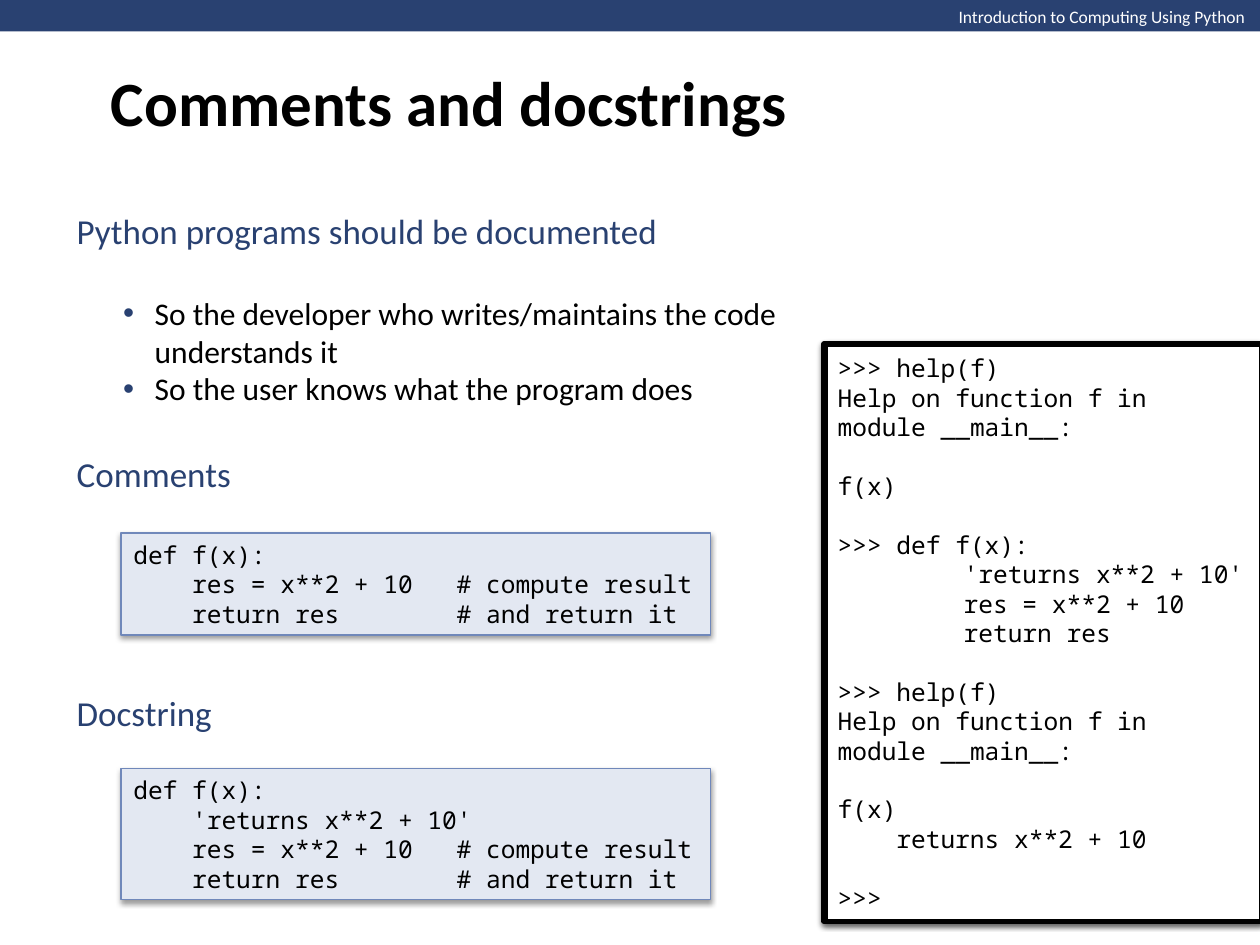
from dataclasses import dataclass

from lxml.etree import SubElement
from pptx import Presentation
from pptx.dml.color import RGBColor
from pptx.enum.shapes import MSO_SHAPE
from pptx.enum.text import MSO_ANCHOR, PP_ALIGN
from pptx.oxml.ns import qn
from pptx.util import Pt


@dataclass(frozen=True)
class Theme:
    navy: str = "294171"
    black: str = "000000"
    white: str = "FFFFFF"
    code_fill: str = "E3E8F2"
    code_line: str = "7088BA"
    sans: str = "Calibri"
    mono: str = "Noto Sans Mono"
    small: float = 10
    code: float = 14
    bullet: float = 18
    heading: float = 20
    title: float = 36


@dataclass(frozen=True)
class Box:
    left: float
    top: float
    width: float
    height: float

    def lengths(self) -> tuple:
        return Pt(self.left), Pt(self.top), Pt(self.width), Pt(self.height)


@dataclass(frozen=True)
class Line:
    text: str
    tabs: tuple = ()
    gap: float = 0


@dataclass(frozen=True)
class Panel:
    box: Box
    fill: str
    line: str
    weight: float
    lines: tuple = ()


T = Theme()
BLANK = 16.8  # height of one code line
INDENT, COMMENT, PROMPT = 33.6, 184.8, 72  # code tab stops

HEADINGS = (
    (Box(36.7, 254.9, 103.7, 31.7), "Comments"),
    (Box(36.7, 391.7, 92.9, 31.7), "Docstring"),
)
BULLETS = (
    "So the developer who writes/maintains the code understands it",
    "So the user knows what the program does",
)
DEF = Line("def f(x):")
DOC = Line("\t'returns x**2 + 10'", (INDENT,))
BODY = (
    Line("\tres = x**2 + 10\t# compute result", (INDENT, COMMENT)),
    Line("\treturn res\t# and return it", (INDENT, COMMENT)),
)
HELP = "Help on function f in module __main__:"
SESSION = (
    Line(">>> help(f)"),
    Line(HELP),
    Line("f(x)", gap=BLANK),
    Line(">>> def f(x):", gap=BLANK),
    Line("\t'returns x**2 + 10'", (PROMPT,)),
    Line("\tres = x**2 + 10", (PROMPT,)),
    Line("\treturn res", (PROMPT,)),
    Line(">>> help(f)", gap=BLANK),
    Line(HELP),
    Line("f(x)", gap=BLANK),
    Line("\treturns x**2 + 10", (INDENT,)),
    Line(">>>", gap=BLANK),
)
PANELS = (
    Panel(Box(69.1, 304.6, 337, 58.3), T.code_fill, T.code_line, 0.75, (DEF, *BODY)),
    Panel(Box(69.1, 439.2, 337, 74.9), T.code_fill, T.code_line, 0.75, (DEF, DOC, *BODY)),
    # Two stacked frames give the session its heavy left edge
    Panel(Box(470.9, 196.6, 249.1, 329.8), T.white, T.black, 3),
    Panel(Box(471.6, 196.6, 249.1, 329.8), T.white, T.black, 3, SESSION),
)


def rgb(value: str) -> RGBColor:
    return RGBColor.from_string(value)


def add_run(p, text: str, size: float, color: str, font: str = T.sans, bold: bool = False) -> None:
    r = p.add_run()
    r.text = text
    r.font.size, r.font.name, r.font.bold = Pt(size), font, bold
    r.font.color.rgb = rgb(color)


def next_paragraph(tf, index: int):
    return tf.add_paragraph() if index else tf.paragraphs[0]


def add_label(slide, box: Box, text: str, size: float, color: str, wrap: bool = False):
    tf = slide.shapes.add_textbox(*box.lengths()).text_frame
    tf.word_wrap = wrap
    add_run(tf.paragraphs[0], text, size, color)
    return tf


def add_bullet(tf, text: str, gap: float) -> None:
    p = tf.add_paragraph()
    p.level = 1
    p.space_before = Pt(gap)
    add_run(p, text, T.bullet, T.black)
    pPr = p._p.get_or_add_pPr()
    pPr.set("marL", str(Pt(44.64)))
    pPr.set("indent", str(Pt(-18)))
    color = SubElement(pPr, qn("a:buClr"))
    SubElement(color, qn("a:srgbClr"), val=T.navy)
    SubElement(pPr, qn("a:buFont"), typeface="Arial")
    SubElement(pPr, qn("a:buChar"), char="•")


def add_shadow(sp) -> None:
    sp.shadow.inherit = False
    effects = sp._element.spPr.find(qn("a:effectLst"))
    shadow = SubElement(effects, qn("a:outerShdw"), blurRad=str(Pt(3.1)), dist=str(Pt(1.6)),
                        dir="5400000", rotWithShape="0")
    color = SubElement(shadow, qn("a:srgbClr"), val=T.black)
    SubElement(color, qn("a:alpha"), val="38000")


def add_panel(slide, panel: Panel) -> None:
    sp = slide.shapes.add_shape(MSO_SHAPE.RECTANGLE, *panel.box.lengths())
    sp.fill.solid()
    sp.fill.fore_color.rgb = rgb(panel.fill)
    sp.line.color.rgb = rgb(panel.line)
    sp.line.width = Pt(panel.weight)
    add_shadow(sp)
    tf = sp.text_frame
    tf.word_wrap = True
    tf.vertical_anchor = MSO_ANCHOR.MIDDLE
    for i, line in enumerate(panel.lines):
        p = next_paragraph(tf, i)
        p.alignment = PP_ALIGN.LEFT
        p.space_before = Pt(line.gap)
        add_run(p, line.text, T.code, T.black, T.mono)
        if line.tabs:
            stops = SubElement(p._p.get_or_add_pPr(), qn("a:tabLst"))
            for pos in line.tabs:
                SubElement(stops, qn("a:tab"), pos=str(Pt(pos)), algn="l")


def main() -> None:
    prs = Presentation()
    prs.slide_width, prs.slide_height = Pt(720), Pt(540)
    slide = prs.slides.add_slide(prs.slide_layouts[5])

    # Title
    title = slide.shapes.title
    title.left, title.top, title.width, title.height = Box(56.2, 0, 612, 115.9).lengths()
    tf = title.text_frame
    tf.vertical_anchor = MSO_ANCHOR.MIDDLE
    tf.paragraphs[0].alignment = PP_ALIGN.LEFT
    add_run(tf.paragraphs[0], "Comments and docstrings", T.title, T.black, bold=True)

    # Header band
    band = slide.shapes.add_shape(MSO_SHAPE.RECTANGLE, *Box(0, 0, 720.7, 18).lengths())
    band.shadow.inherit = False
    band.fill.solid()
    band.fill.fore_color.rgb = rgb(T.navy)
    band.line.fill.background()
    add_label(slide, Box(540.7, 0, 180, 19.4), "Introduction to Computing Using Python",
              T.small, T.white)

    # Reasons to document
    tf = add_label(slide, Box(36.7, 115.9, 414.7, 121), "Python programs should be documented",
                   T.heading, T.navy, wrap=True)
    for i, text in enumerate(BULLETS):
        add_bullet(tf, text, 0 if i else 24.4)

    # Headings, code samples and interpreter session
    for box, text in HEADINGS:
        add_label(slide, box, text, T.heading, T.navy)
    for panel in PANELS:
        add_panel(slide, panel)

    prs.save("out.pptx")


if __name__ == "__main__":
    main()
